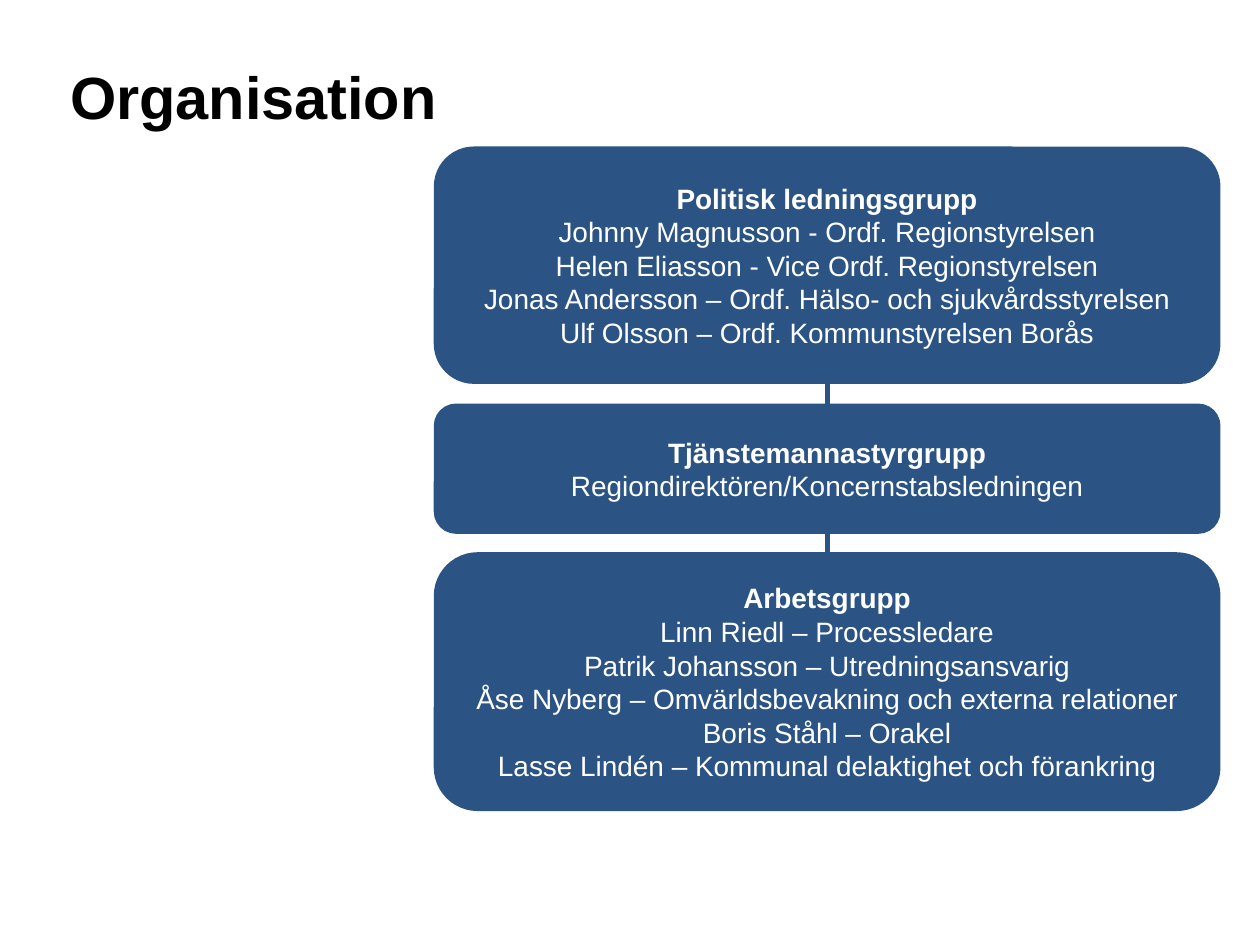
from lxml import etree
from pptx import Presentation
from pptx.dml.color import RGBColor
from pptx.enum import shapes, text
from pptx.oxml.ns import qn
from pptx.util import Inches, Pt

BLUE = RGBColor(0x2B, 0x54, 0x84)
WHITE = RGBColor(0xFF, 0xFF, 0xFF)
BLACK = RGBColor(0, 0, 0)

LEFT, WIDTH = 3.45, 6.23
# Top, height and lines of each group; the first line is its heading
GROUPS = [
    (1.17, 1.87, ["Politisk ledningsgrupp",
                  "Johnny Magnusson - Ordf. Regionstyrelsen",
                  "Helen Eliasson - Vice Ordf. Regionstyrelsen",
                  "Jonas Andersson – Ordf. Hälso- och sjukvårdsstyrelsen",
                  "Ulf Olsson – Ordf. Kommunstyrelsen Borås"]),
    (3.21, 1.02, ["Tjänstemannastyrgrupp",
                  "Regiondirektören/Koncernstabsledningen"]),
    (4.39, 2.04, ["Arbetsgrupp",
                  "Linn Riedl – Processledare",
                  "Patrik Johansson – Utredningsansvarig",
                  "Åse Nyberg – Omvärldsbevakning och externa relationer",
                  "Boris Ståhl – Orakel",
                  "Lasse Lindén – Kommunal delaktighet och förankring"]),
]


class Painter:
    """Holds the style and the current slide."""
    font = "Arial"

    def __init__(self, slide):
        self.slide = slide

    def label(self, para, words, color, **form):
        run = para.add_run()
        run.text = words
        run.font.color.rgb = color
        for key, value in {"name": self.font, **form}.items():
            setattr(run.font, key, value)

    def title(self, words, *area):
        frame = self.slide.shapes.add_textbox(*map(Inches, area)).text_frame
        form = {"word_wrap": True, "margin_top": 0, "margin_bottom": 0,
                "vertical_anchor": text.MSO_ANCHOR.MIDDLE}
        for key, value in form.items():
            setattr(frame, key, value)
        self.label(frame.paragraphs[0], words, BLACK, size=Pt(34), bold=True)

    def link(self, x, top, end):
        line = self.slide.shapes.add_connector(
            shapes.MSO_CONNECTOR.STRAIGHT, *map(Inches, (x, top, x, end)))
        line.line.color.rgb = BLUE
        line.line.width = Pt(2.75)
        etree.SubElement(line._element.spPr, qn("a:effectLst"))

    def group(self, lines, *area):
        box = self.slide.shapes.add_shape(
            shapes.MSO_SHAPE.ROUNDED_RECTANGLE, *map(Inches, area))
        box.shadow.inherit = False
        box.fill.solid()
        box.fill.fore_color.rgb = BLUE
        box.line.color.rgb = BLUE
        box.line.width = Pt(1)
        frame = box.text_frame
        frame.word_wrap = True
        frame.vertical_anchor = text.MSO_ANCHOR.MIDDLE
        for i, words in enumerate(lines):
            para = frame.add_paragraph() if i else frame.paragraphs[0]
            para.alignment = text.PP_ALIGN.CENTER
            self.label(para, words, WHITE, size=Pt(16), bold=i == 0)


def main():
    deck = Presentation()
    deck.slide_width, deck.slide_height = Inches(10), Inches(7.5)
    paint = Painter(deck.slides.add_slide(deck.slide_layouts[6]))

    # Line behind the groups
    paint.link(LEFT + WIDTH / 2, 2.48, 5.13)

    # Heading
    paint.title("Organisation", 0.46, 0.44, 9.08, 0.64)

    # Groups, from top to bottom
    for top, height, lines in GROUPS:
        paint.group(lines, LEFT, top, WIDTH, height)

    deck.save("out.pptx")


if __name__ == "__main__":
    main()
